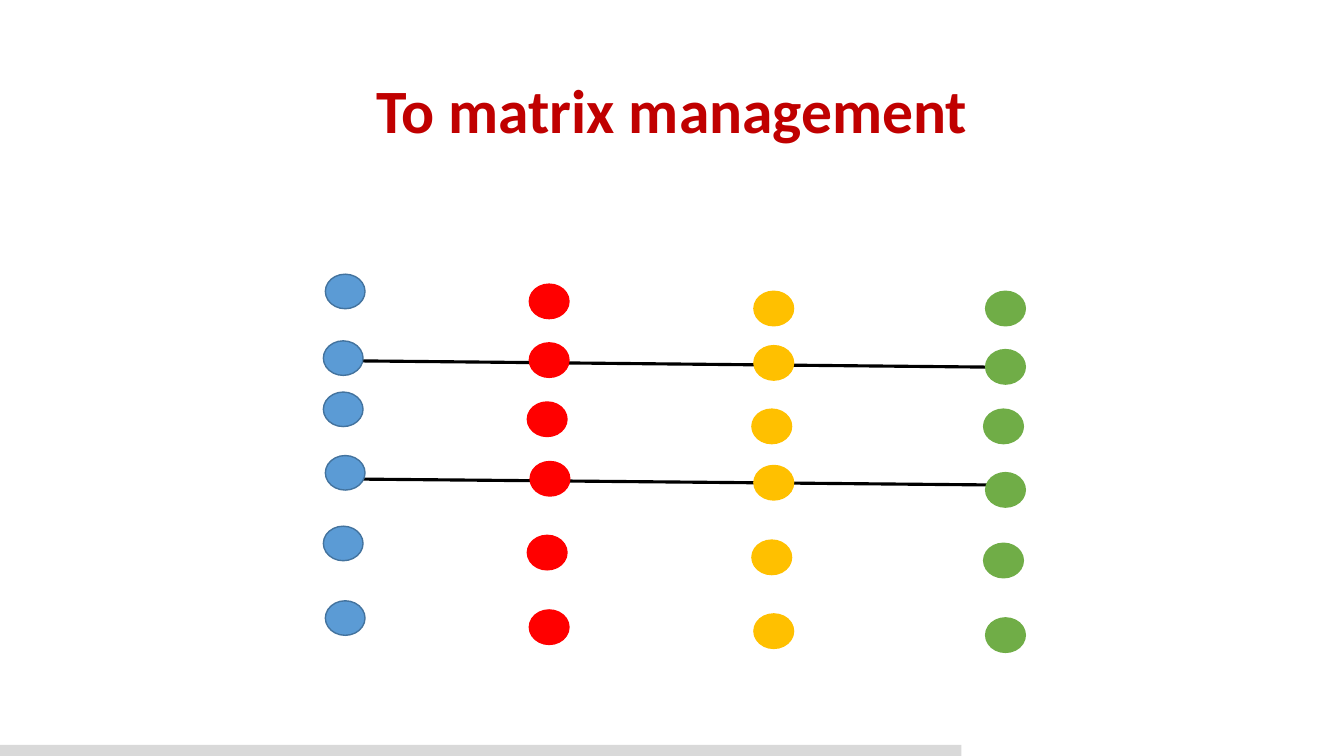
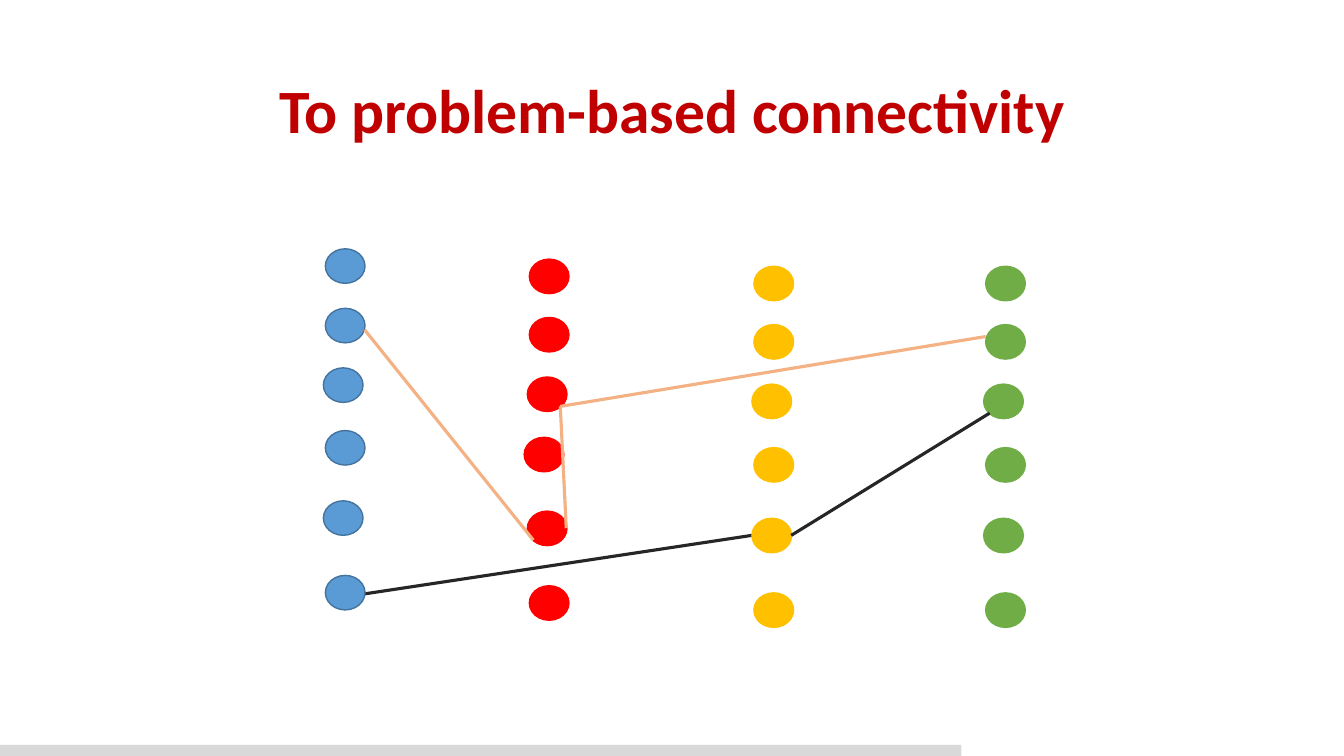
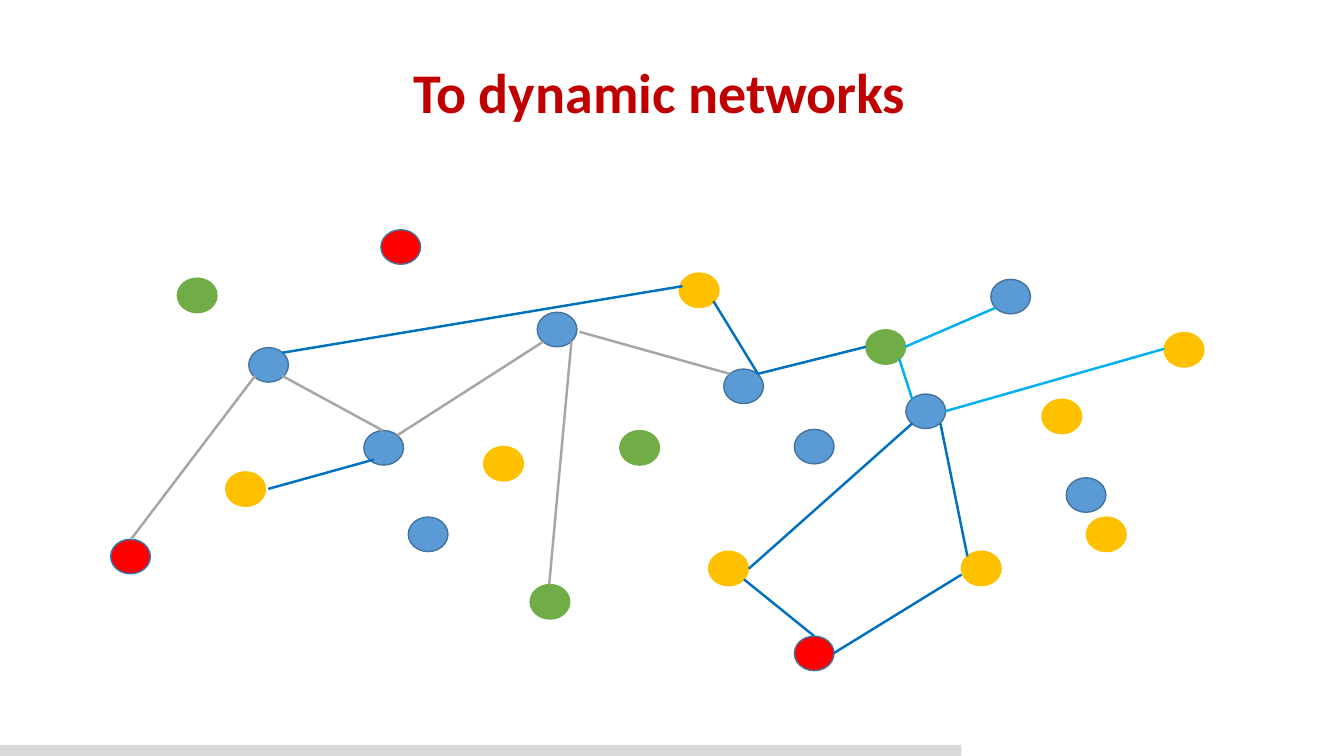
from lxml import etree
from pptx import Presentation
from pptx.dml.color import RGBColor
from pptx.enum.shapes import MSO_CONNECTOR, MSO_SHAPE
from pptx.enum.text import MSO_ANCHOR, PP_ALIGN
from pptx.oxml.ns import qn
from pptx.util import Cm, Pt

OVAL = MSO_SHAPE.OVAL
RECT = MSO_SHAPE.RECTANGLE
LINE = MSO_CONNECTOR.STRAIGHT
MIDDLE = MSO_ANCHOR.MIDDLE
CENTER = PP_ALIGN.CENTER

HUES = {
    "title": "C00000", "bar": "D9D9D9", "blue": "5B9BD5", "navy": "43739E",
    "steel": "2E75B6", "red": "FF0000", "gold": "FFC000", "green": "70AD47",
    "black": "000000", "ink": "262626", "peach": "F4B183",
    "grey": "A6A6A6", "sky": "00B0F0", "deep": "0070C0",
}
HUES = {name: RGBColor.from_string(code) for name, code in HUES.items()}
FONT = {"name": "Calibri", "bold": True}
DOT = (1, 0.87)
BAR = (0, 18.77, 24.23, 0.28)
WIDE = (2.34, 1.02, 29.21, 3.68)
HIGH = (0.25, 1.35, 32.74, 2.11)

COLS = {"blue": 8.2, "red": 13.34, "gold": 19, "green": 24.84}
SHIFTS = (0, 0, -0.05, 0, -0.05, 0)

MATRIX = {
    "blue": (6.91, 8.59, 9.88, 11.48, 13.26, 15.14),
    "red": (7.16, 8.64, 10.13, 11.63, 13.49, 15.37),
    "gold": (7.34, 8.71, 10.31, 11.73, 13.61, 15.47),
    "green": (7.34, 8.81, 10.31, 11.91, 13.69, 15.57),
}
LINKED = {
    "blue": (6.27, 7.77, 9.27, 10.85, 12.62, 14.5),
    "red": (6.53, 8, 9.5, 11.02, 12.88, 14.76),
    "gold": (6.71, 8.18, 9.68, 11.28, 13.06, 14.94),
    "green": (6.71, 8.18, 9.68, 11.28, 13.06, 14.94),
}
NUDGES = [{("blue", 1): -0.05, ("red", 3): 0.02}, {("red", 3): -0.13}]

grids = []
for rows, nudge in zip((MATRIX, LINKED), NUDGES):
    grids.append([
        (hue, "navy" if hue == "blue" else hue,
         [(COLS[hue] + SHIFTS[row] + nudge.get((hue, row), 0), top)
          for row, top in enumerate(tops)])
        for hue, tops in rows.items()
    ])

NET = [
    ("blue", "navy", [
        (6.27, 8.76), (9.17, 10.85), (10.29, 13.03), (13.54, 7.87), (22.83, 9.93),
        (18.24, 9.3), (20.02, 10.82), (24.97, 7.04), (26.87, 12.04)]),
    ("red", "navy", [(9.6, 5.79), (20.02, 16.03)]),
    ("red", "steel", [(2.79, 13.59)]),
    ("gold", "gold", [
        (5.69, 11.89), (12.19, 11.25), (17.86, 13.89), (17.12, 6.88),
        (24.23, 13.89), (26.26, 10.06), (29.34, 8.38), (27.38, 13.03)]),
    ("green", "green", [(21.82, 8.31), (13.36, 14.73), (15.62, 10.85), (4.47, 7.01)]),
]

SLIDES = [
    {"title": "To matrix management", "box": WIDE, "size": 44, "width": 2.25,
     "dots": grids[0],
     "back": {"black": [(8.81, 12.07, 24.97, 12.22), (8.69, 9.09, 24.84, 9.25)]},
     "front": {}},
    {"title": "To problem-based connectivity", "box": WIDE, "size": 44, "width": 2.25,
     "dots": grids[1],
     "back": {"ink": [(9.02, 14.99, 18.95, 13.49)]},
     "front": {
         "peach": [(9.19, 8.31, 13.44, 13.61), (14.12, 10.24, 24.84, 8.48),
                   (14.27, 13.31, 14.12, 10.24)],
         "ink": [(19.94, 13.49, 24.94, 10.41)]}},
    {"title": "To dynamic networks", "box": HIGH, "size": 40, "width": 1.75,
     "dots": NET,
     "back": {},
     "front": {
         "grey": [(10.01, 10.97, 13.69, 8.61), (13.84, 14.73, 14.4, 8.61),
                  (7.11, 9.47, 9.65, 10.85), (14.6, 8.36, 18.39, 9.42),
                  (6.43, 9.47, 3.3, 13.59)],
         "sky": [(22.81, 8.74, 25.1, 7.75), (22.99, 10.06, 22.66, 9.04),
                 (23.83, 10.36, 29.34, 8.79)],
         "deep": [(17.2, 7.21, 7.11, 8.89), (21.82, 8.74, 19.1, 9.42),
                  (22.99, 10.67, 18.87, 14.33), (19.1, 9.42, 17.98, 7.59),
                  (23.7, 10.67, 24.38, 14.02), (9.42, 11.58, 6.76, 12.32),
                  (20.52, 16.03, 18.75, 14.6), (24.23, 14.48, 21.01, 16.46)]}},
]


def add_form(slide, kind, box, fill, edge=None):
    form = slide.shapes.add_shape(kind, *map(Cm, box))
    form.shadow.inherit = False
    form.fill.solid()
    form.fill.fore_color.rgb = HUES[fill]
    if edge:
        form.line.color.rgb = HUES[edge]
        form.line.width = Pt(1)
    else:
        form.line.fill.background()


def add_links(slide, links, width):
    for hue, ends in links.items():
        for end in ends:
            link = slide.shapes.add_connector(LINE, *map(Cm, end))
            link.line.color.rgb = HUES[hue]
            link.line.width = Pt(width)
            etree.SubElement(link._element.spPr, qn("a:effectLst"))


deck = Presentation()
deck.slide_width, deck.slide_height = Cm(33.87), Cm(19.05)

for page in SLIDES:
    slide = deck.slides.add_slide(deck.slide_layouts[5])
    title = slide.shapes.title
    title.left, title.top, title.width, title.height = map(Cm, page["box"])
    frame = title.text_frame
    frame.text = page["title"]
    frame.vertical_anchor = MIDDLE
    para = frame.paragraphs[0]
    para.alignment = CENTER
    para.line_spacing = 0.9
    font = para.runs[0].font
    for key, value in FONT.items():
        setattr(font, key, value)
    font.size = Pt(page["size"])
    font.color.rgb = HUES["title"]

    add_form(slide, RECT, BAR, "bar")
    add_links(slide, page["back"], page["width"])
    for fill, edge, spots in page["dots"]:
        for spot in spots:
            add_form(slide, OVAL, spot + DOT, fill, edge)
    add_links(slide, page["front"], page["width"])

deck.save("out.pptx")
